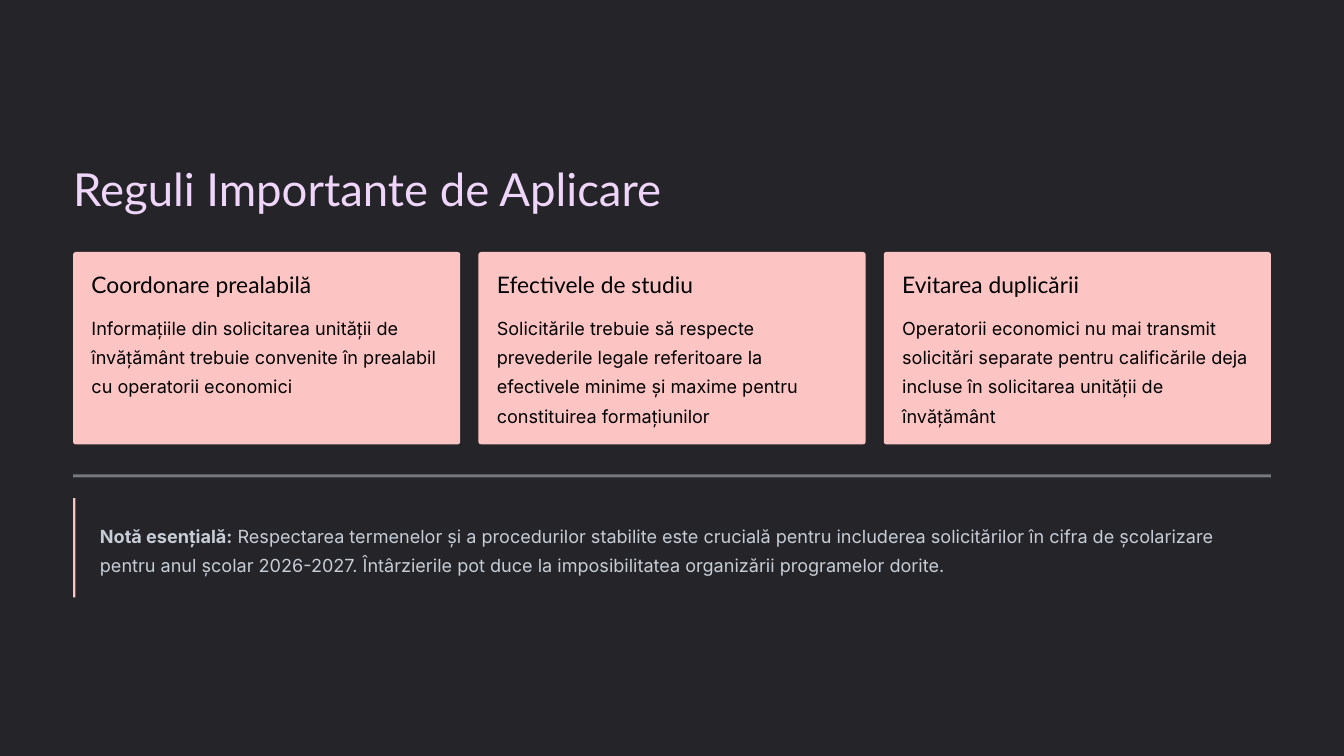
from dataclasses import dataclass

import pptx
import pptx.dml.color
import pptx.enum.shapes
import pptx.enum.text
import pptx.oxml
import pptx.oxml.ns
import pptx.shapes.autoshape
import pptx.slide
import pptx.util

Pt = pptx.util.Pt
Shapes = pptx.enum.shapes.MSO_SHAPE

COLORS = {
    "background": "242429",
    "title": "EFD5FA",
    "accent": "FDC4C4",
    "card_text": "000000",
    "note": "C7CDD6",
}

# Layout in points
LEFT, CONTENT_WIDTH = 62.64, 1026.72
CARD_TOP, CARD_HEIGHT, CARD_GAP, CARD_PADDING = 216, 164.9, 15.6, 15.8


@dataclass
class Card:
    heading: str
    body: str


CARDS = [
    Card("Coordonare prealabilă",
         "Informațiile din solicitarea unității de învățământ trebuie convenite "
         "în prealabil cu operatorii economici"),
    Card("Efectivele de studiu",
         "Solicitările trebuie să respecte prevederile legale referitoare la "
         "efectivele minime și maxime pentru constituirea formațiunilor"),
    Card("Evitarea duplicării",
         "Operatorii economici nu mai transmit solicitări separate pentru "
         "calificările deja incluse în solicitarea unității de învățământ"),
]
NOTE_LABEL = "Notă esențială:"
NOTE = (" Respectarea termenelor și a procedurilor stabilite este crucială pentru "
        "includerea solicitărilor în cifra de școlarizare pentru anul școlar "
        "2026-2027. Întârzierile pot duce la imposibilitatea organizării "
        "programelor dorite.")


def rgb(name: str) -> pptx.dml.color.RGBColor:
    return pptx.dml.color.RGBColor.from_string(COLORS[name])


def add_block(slide: pptx.slide.Slide, left: float, top: float, width: float,
              height: float, color: str,
              kind: Shapes = Shapes.RECTANGLE) -> pptx.shapes.autoshape.Shape:
    block = slide.shapes.add_shape(kind, Pt(left), Pt(top), Pt(width), Pt(height))
    block.shadow.inherit = False
    block.fill.solid()
    block.fill.fore_color.rgb = rgb(color)
    block.line.fill.background()
    return block


def add_text(slide: pptx.slide.Slide, text: str, *, left: float, top: float,
             width: float, height: float, color: str, font: str = "Inter",
             size: float = 15.5, spacing: float = 25, wrap: bool = True,
             bold_lead: str = "") -> None:
    box = slide.shapes.add_textbox(Pt(left), Pt(top), Pt(width), Pt(height))
    frame = box.text_frame
    frame.word_wrap = wrap
    frame.vertical_anchor = pptx.enum.text.MSO_ANCHOR.TOP
    frame.margin_left = frame.margin_right = 0
    frame.margin_top = frame.margin_bottom = 0
    paragraph = frame.paragraphs[0]
    paragraph.line_spacing = Pt(spacing)
    for content, bold in ((bold_lead, True), (text, False)):
        if content:
            run = paragraph.add_run()
            run.text = content
            run.font.name = font
            run.font.size = Pt(size)
            run.font.bold = bold
            run.font.color.rgb = rgb(color)


def add_card(slide: pptx.slide.Slide, card: Card, left: float, width: float) -> None:
    panel = add_block(slide, left, CARD_TOP, width, CARD_HEIGHT, "accent",
                      Shapes.ROUNDED_RECTANGLE)
    panel.adjustments[0] = 0.014
    text_left, text_width = left + CARD_PADDING, width - 2 * CARD_PADDING
    add_text(slide, card.heading, left=text_left, top=CARD_TOP + CARD_PADDING,
             width=text_width, height=24.5, color="card_text", font="Lato",
             size=19.5, spacing=24, wrap=False)
    add_text(slide, card.body, left=text_left, top=CARD_TOP + 49.7,
             width=text_width, height=100, color="card_text")


def main() -> None:
    deck = pptx.Presentation()
    deck.slide_width, deck.slide_height = Pt(1152), Pt(648)
    slide = deck.slides.add_slide(deck.slide_layouts[6])
    slide.background.fill.solid()
    slide.background.fill.fore_color.rgb = rgb("background")

    # Title
    add_text(slide, "Reguli Importante de Aplicare", left=LEFT, top=136.1,
             width=539.3, height=49, color="title", font="Lato", size=39,
             spacing=48.5, wrap=False)

    # Rule cards
    card_width = (CONTENT_WIDTH - CARD_GAP * (len(CARDS) - 1)) / len(CARDS)
    for index, card in enumerate(CARDS):
        add_card(slide, card, LEFT + index * (card_width + CARD_GAP), card_width)

    # Half-transparent divider
    divider = add_block(slide, LEFT, 406.6, CONTENT_WIDTH, 2.6, "note")
    divider_color = divider.fill._xPr.find(".//" + pptx.oxml.ns.qn("a:srgbClr"))
    divider_color.append(pptx.oxml.parse_xml(
        f'<a:alpha {pptx.oxml.ns.nsdecls("a")} val="50000"/>'))

    # Note with accent bar
    add_text(slide, NOTE, left=85.7, top=444.2, width=1003.7, height=49.7,
             color="note", bold_lead=NOTE_LABEL)
    add_block(slide, LEFT, 427, 1.9, 85, "accent")

    deck.save("out.pptx")


if __name__ == "__main__":
    main()
